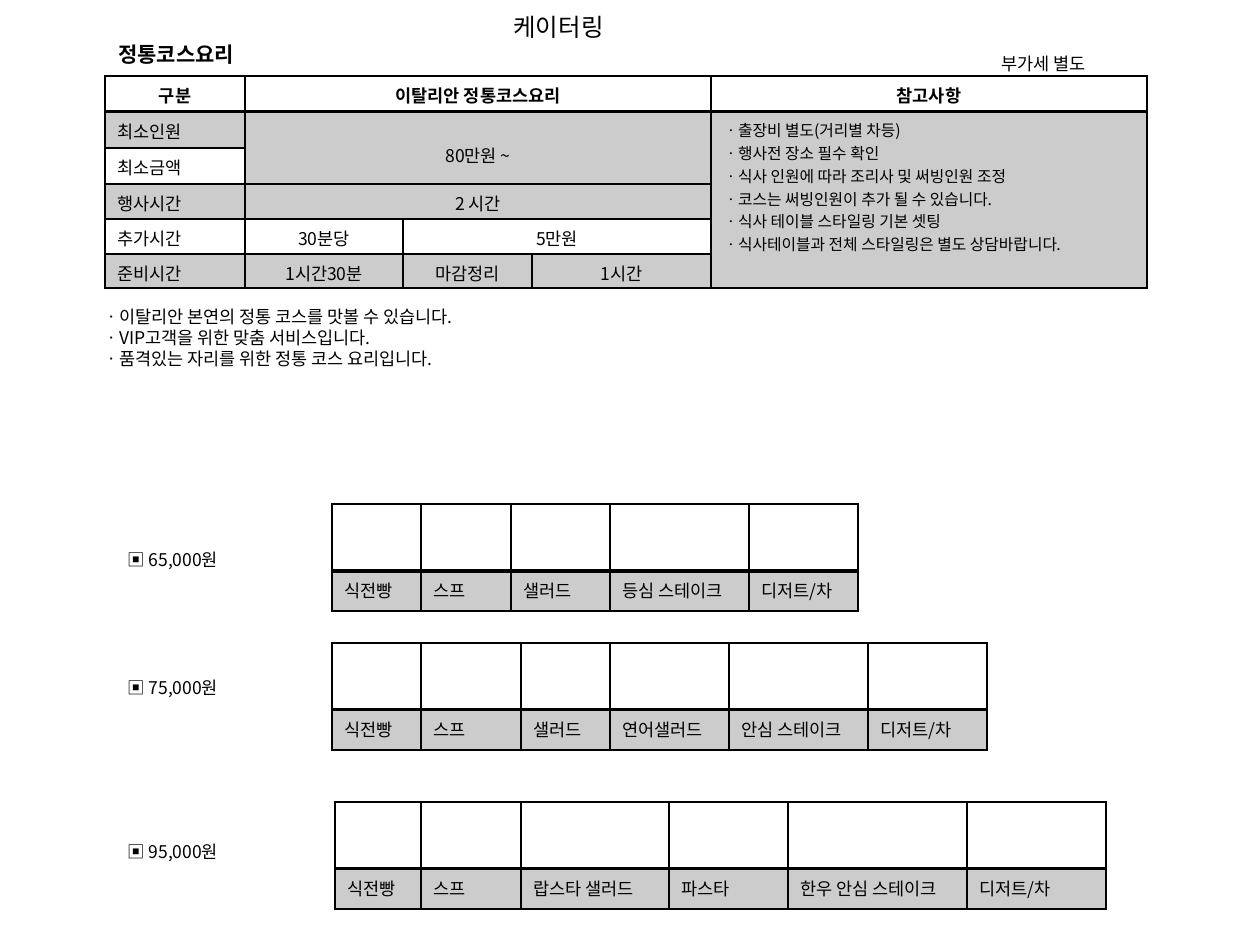
import lxml.etree
import pptx
import pptx.dml.color
import pptx.enum.text
import pptx.oxml.ns
import pptx.util

PX = 7257
THEME = {
    "font": "Noto Sans CJK KR",
    "ink": pptx.dml.color.RGBColor(0, 0, 0),
    "shade_alpha": 20,
    "title": 14,
    "heading": 12,
    "body": 10,
    "note": 9,
    "thin": 1,
    "thick": 2,
}
CENTER = pptx.enum.text.PP_ALIGN.CENTER
qn = pptx.oxml.ns.qn


def write(frame, text, size, bold=False, align=None):
    frame.text = text
    for para in frame.paragraphs:
        para.alignment = align
        for span in para.runs:
            span.font.name = THEME["font"]
            span.font.size = pptx.util.Pt(size)
            span.font.bold = bold
            span.font.color.rgb = THEME["ink"]
            east_asian = lxml.etree.SubElement(span.font._element, qn("a:ea"))
            east_asian.set("typeface", THEME["font"])


def add_grid(left, top, columns, rows, shaded):
    frame = page.shapes.add_table(
        len(rows), len(columns), left * PX, top * PX, sum(columns) * PX, sum(rows) * PX
    )
    grid = frame.table
    grid.first_row = grid.horz_banding = False
    for column, width in zip(grid.columns, columns):
        column.width = width * PX
    for row, height in zip(grid.rows, rows):
        row.height = height * PX
    for r in range(len(rows)):
        for c in range(len(columns)):
            cell = grid.cell(r, c)
            properties = cell._tc.get_or_add_tcPr()
            for side in "LRTB":
                weight = THEME["thick" if r == 0 and side == "B" else "thin"]
                line = lxml.etree.SubElement(properties, qn("a:ln" + side))
                line.set("w", str(pptx.util.Pt(weight)))
                paint = lxml.etree.SubElement(line, qn("a:solidFill"))
                color = lxml.etree.SubElement(paint, qn("a:srgbClr"))
                color.set("val", str(THEME["ink"]))
            if (r, c) in shaded:
                cell.fill.solid()
                cell.fill.fore_color.rgb = THEME["ink"]
                color = properties.find(qn("a:solidFill")).find(qn("a:srgbClr"))
                alpha = lxml.etree.SubElement(color, qn("a:alpha"))
                alpha.set("val", str(THEME["shade_alpha"] * 1000))
            else:
                cell.fill.background()
    return grid


deck = pptx.Presentation()
deck.slide_width = pptx.util.Inches(10)
deck.slide_height = pptx.util.Inches(7.5)
page = deck.slides.add_slide(deck.slide_layouts[6])

benefits = "\n".join([
    "ㆍ이탈리안 본연의 정통 코스를 맛볼 수 있습니다.",
    "ㆍVIP고객을 위한 맞춤 서비스입니다.",
    "ㆍ품격있는 자리를 위한 정통 코스 요리입니다.",
])
labels = [
    ("케이터링", 501, 6, 125, 43, "title", False),
    ("정통코스요리", 106, 35, 152, 38, "heading", True),
    ("부가세 별도", 989, 47, 120, 34, "body", False),
    (benefits, 91, 300, 420, 77, "body", False),
    ("▣ 65,000원", 115, 543, 120, 34, "body", False),
    ("▣ 75,000원", 115, 671, 120, 34, "body", False),
    ("▣ 95,000원", 115, 835, 120, 34, "body", False),
]
for text, left, top, width, height, size, bold in labels:
    box = page.shapes.add_textbox(left * PX, top * PX, width * PX, height * PX)
    box.text_frame.word_wrap = False
    box.text_frame.auto_size = pptx.enum.text.MSO_AUTO_SIZE.SHAPE_TO_FIT_TEXT
    write(box.text_frame, text, THEME[size], bold)

shaded = {(r, c) for r in (1, 3, 5) for c in range(5)} | {(2, 1)}
terms = add_grid(105, 76, [140, 158, 129, 179, 436], [36, 36, 36, 35, 35, 34], shaded)
for first, last in [((0, 1), (0, 3)), ((1, 1), (2, 3)), ((1, 4), (5, 4)),
                    ((3, 1), (3, 3)), ((4, 2), (4, 3))]:
    terms.cell(*first).merge(terms.cell(*last))

term_rows = [
    {0: "구분", 1: "이탈리안 정통코스요리", 4: "참고사항"},
    {0: "최소인원", 1: "80만원 ~"},
    {0: "최소금액"},
    {0: "행사시간", 1: "2 시간"},
    {0: "추가시간", 1: "30분당", 2: "5만원"},
    {0: "준비시간", 1: "1시간30분", 2: "마감정리", 3: "1시간"},
]
for r, entries in enumerate(term_rows):
    for c, text in entries.items():
        align = CENTER if r == 0 or c > 0 else None
        write(terms.cell(r, c).text_frame, text, THEME["body"], r == 0, align)
terms.cell(1, 1).margin_top = 30 * PX

remarks = "\n".join([
    "ㆍ출장비 별도(거리별 차등)",
    "ㆍ행사전 장소 필수 확인",
    "ㆍ식사 인원에 따라 조리사 및 써빙인원 조정",
    "ㆍ코스는 써빙인원이 추가 될 수 있습니다.",
    "ㆍ식사 테이블 스타일링 기본 셋팅",
    "ㆍ식사테이블과 전체 스타일링은 별도 상담바랍니다.",
])
write(terms.cell(1, 4).text_frame, remarks, THEME["note"])

courses = [
    (332, 504, {"식전빵": 89, "스프": 90, "샐러드": 99, "등심 스테이크": 139,
                "디저트/차": 109}),
    (332, 643, {"식전빵": 89, "스프": 100, "샐러드": 89, "연어샐러드": 119,
                "안심 스테이크": 139, "디저트/차": 119}),
    (335, 802, {"식전빵": 86, "스프": 100, "랍스타 샐러드": 148, "파스타": 119,
                "한우 안심 스테이크": 179, "디저트/차": 139}),
]
for left, top, dishes in courses:
    shaded = {(1, c) for c in range(len(dishes))}
    menu = add_grid(left, top, list(dishes.values()), [67, 40], shaded)
    for c, dish in enumerate(dishes):
        write(menu.cell(1, c).text_frame, dish, THEME["body"])

deck.save("out.pptx")
